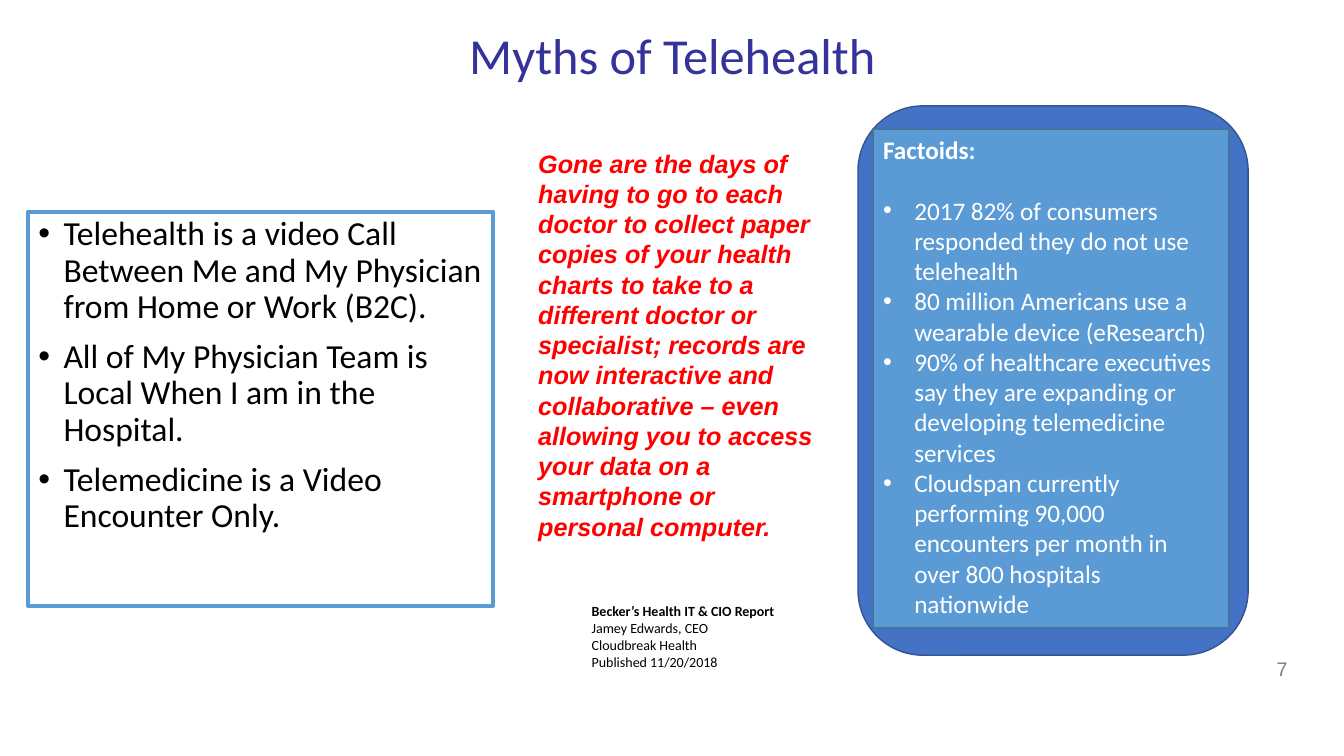
from lxml.etree import SubElement
from pptx import Presentation
from pptx.dml.color import RGBColor
from pptx.enum.shapes import MSO_SHAPE
from pptx.enum.text import MSO_ANCHOR, MSO_AUTO_SIZE, PP_ALIGN
from pptx.oxml.ns import qn
from pptx.util import Emu, Pt

EMU_PER_PX = 9144  # 100 px to the inch

WHITE = RGBColor(0xFF, 0xFF, 0xFF)
BLACK = RGBColor(0, 0, 0)
RED = RGBColor(0xFF, 0, 0)
GRAY = RGBColor(0x80, 0x80, 0x80)
NAVY = RGBColor(0x33, 0x33, 0x99)
SKY = RGBColor(0x5B, 0x9B, 0xD5)
SKY_EDGE = RGBColor(0x43, 0x73, 0x9E)
BLUE = RGBColor(0x44, 0x72, 0xC4)
BLUE_EDGE = RGBColor(0x32, 0x54, 0x91)

MYTHS = [
    "Telehealth is a video Call Between Me and My Physician from Home or Work (B2C).",
    "All of My Physician Team is Local When I am in the Hospital.",
    "Telemedicine is a Video Encounter Only.",
]
QUOTE = (
    "Gone are the days of having to go to each doctor to collect paper copies of "
    "your health charts to take to a different doctor or specialist; records are now "
    "interactive and collaborative – even allowing you to access your data on a "
    "smartphone or personal computer."
)
CITATION = [
    "Becker’s Health IT & CIO Report",
    "Jamey Edwards, CEO",
    "Cloudbreak Health",
    "Published 11/20/2018",
]
FACTOIDS = [
    "2017 82% of consumers responded they do not use telehealth",
    "80 million Americans use a wearable device (eResearch)",
    "90% of healthcare executives say they are expanding or developing telemedicine services",
    "Cloudspan currently performing 90,000 encounters per month in over 800 hospitals nationwide",
]


def px(length):
    return Emu(length * EMU_PER_PX)


def place(shape, box):
    shape.left, shape.top, shape.width, shape.height = map(px, box)


def set_lines(shape, lines, size, color, font="Calibri", anchor=MSO_ANCHOR.TOP):
    """Fill a shape with one paragraph a line and return the paragraphs."""
    frame = shape.text_frame
    frame.text = "\n".join(lines)
    frame.word_wrap = True
    frame.auto_size = MSO_AUTO_SIZE.NONE
    frame.vertical_anchor = anchor
    for paragraph in frame.paragraphs:
        paragraph.alignment = PP_ALIGN.LEFT
        for run in paragraph.runs:
            run.font.name = font
            run.font.size = Pt(size)
            run.font.color.rgb = color
    return frame.paragraphs


def add_bullet(paragraph, indent):
    properties = paragraph._p.get_or_add_pPr()
    properties.set("marL", str(px(indent)))
    properties.set("indent", str(-px(indent)))
    SubElement(properties, qn("a:buFont")).set("typeface", "Arial")
    SubElement(properties, qn("a:buChar")).set("char", "•")


def paint(shape, fill, line, width):
    shape.fill.solid()
    shape.fill.fore_color.rgb = fill
    shape.line.color.rgb = line
    shape.line.width = Pt(width)


def add_panel(slide, kind, box, fill, line):
    panel = slide.shapes.add_shape(kind, *map(px, box))
    panel.shadow.inherit = False
    paint(panel, fill, line, 1)
    return panel


def add_text(slide, box, lines, size, color, font="Calibri"):
    text_box = slide.shapes.add_textbox(*map(px, box))
    return set_lines(text_box, lines, size, color, font)


def fill_title(slide, box):
    title = slide.shapes.title
    place(title, box)
    heading = set_lines(title, ["Myths of Telehealth"], 36, NAVY, anchor=MSO_ANCHOR.MIDDLE)[0]
    heading.alignment = PP_ALIGN.CENTER


def fill_myths(slide, box):
    body = slide.placeholders[1]
    place(body, box)
    paint(body, WHITE, SKY, 3)
    for index, paragraph in enumerate(set_lines(body, MYTHS, 24, BLACK)):
        paragraph.line_spacing = 0.9
        paragraph.space_before = Pt(10 if index else 0)
        add_bullet(paragraph, 25)


def add_quote(slide, box):
    """Red quotation with its citation below."""
    left, top, width, height = box
    quote = add_text(slide, box, [QUOTE], 18, RED, "Arial")[0]
    quote.runs[0].font.bold = True
    quote.runs[0].font.italic = True
    citation_box = (left + 53, top + height + 47, width + 65, 94)
    citation = add_text(slide, citation_box, CITATION, 10, BLACK)
    citation[0].runs[0].font.bold = True


def add_factoids(slide, box):
    """Rounded frame with a lighter text panel inside it."""
    left, top, width, height = box
    add_panel(slide, MSO_SHAPE.ROUNDED_RECTANGLE, box, BLUE, BLUE_EDGE)
    inner_box = (left + 15, top + 23, width - 34, height - 50)
    panel = add_panel(slide, MSO_SHAPE.RECTANGLE, inner_box, SKY, SKY_EDGE)
    heading, *facts = set_lines(panel, ["Factoids:", *FACTOIDS], 18, WHITE)
    heading.runs[0].font.bold = True
    heading.space_after = Pt(22)
    for fact in facts:
        add_bullet(fact, 31)


def add_slide_number(slide, box):
    number = add_text(slide, box, ["7"], 14, GRAY, "Arial")[0]
    number.alignment = PP_ALIGN.CENTER


def main():
    presentation = Presentation()
    presentation.slide_width = px(1333)
    presentation.slide_height = px(750)
    slide = presentation.slides.add_slide(presentation.slide_layouts[1])
    fill_title(slide, (67, 18, 1200, 72))
    fill_myths(slide, (28, 210, 461, 391))
    add_quote(slide, (524, 142, 303, 404))
    add_factoids(slide, (851, 105, 387, 545))
    add_slide_number(slide, (1116, 647, 311, 60))
    presentation.save("out.pptx")


if __name__ == "__main__":
    main()
